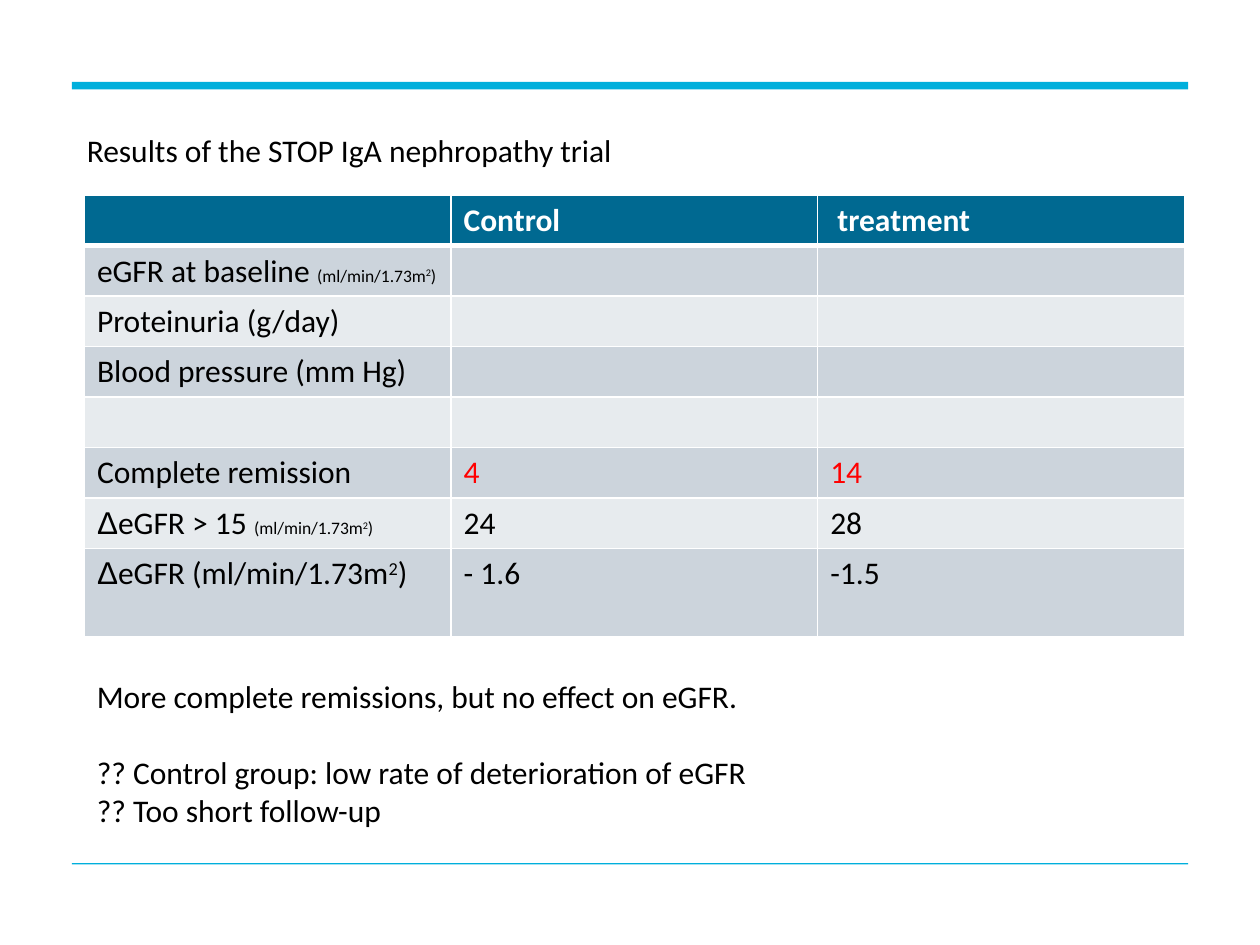
from pptx import Presentation
from pptx.dml.color import RGBColor
from pptx.enum.shapes import MSO_SHAPE as SHAPE
from pptx.oxml import parse_xml
from pptx.oxml.ns import nsdecls
from pptx.util import Inches, Pt

UNIT = [("(ml/min/1.73m", {"size": 10}), ("2", {"size": 10, "sup": True}),
        (")", {"size": 10})]
DELTA = ("Δ", {"font": "Arial"})
RED = {"color": "FF0000"}

ROWS = [
    ["", "Control", " treatment"],
    [["eGFR at baseline ", *UNIT], "", ""],
    ["Proteinuria (g/day)", "", ""],
    ["Blood pressure (mm Hg)", "", ""],
    ["", "", ""],
    ["Complete remission", [("4", RED)], [("14", RED)]],
    [[DELTA, "eGFR > 15 ", *UNIT], "24", "28"],
    [[DELTA, "eGFR (ml/min/1.73m", ("2", {"sup": True}), ")"], "- 1.6", "-1.5"],
]


def rgb(value):
    return RGBColor.from_string(value)


class TrialSlide:
    font, size, ink = "Calibri", 18, "000000"
    accent, header = "00AFDC", "006991"
    bands = ("CCD4DC", "E7EBEE")

    def __init__(self, prs):
        self.s = prs.slides.add_slide(prs.slide_layouts[6])

    def add_runs(self, p, runs, color=None, bold=False):
        """Fill a paragraph from a string or a list of strings and (text, style) pairs."""
        for item in [runs] if isinstance(runs, str) else runs:
            text, style = (item, {}) if isinstance(item, str) else item
            r = p.add_run()
            r.text = text
            r.font.name = style.get("font", self.font)
            r.font.size = Pt(style.get("size", self.size))
            r.font.bold = bold
            r.font.color.rgb = rgb(style.get("color", color or self.ink))
            if style.get("sup"):
                r._r.get_or_add_rPr().set("baseline", "30000")

    def rule(self, top, height):
        bar = self.s.shapes.add_shape(SHAPE.RECTANGLE, Inches(0.57), Inches(top),
                                      Inches(8.86), Inches(height))
        bar.shadow.inherit = False
        bar.fill.solid()
        bar.fill.fore_color.rgb = rgb(self.accent)
        bar.line.fill.background()

    def text(self, left, top, width, height, lines):
        """Add a text box; each line is (text, space before in points)."""
        box = self.s.shapes.add_textbox(Inches(left), Inches(top),
                                        Inches(width), Inches(height))
        tf = box.text_frame
        tf.word_wrap = True
        for i, (line, gap) in enumerate(lines):
            p = tf.add_paragraph() if i else tf.paragraphs[0]
            p.space_before = Pt(gap)
            self.add_runs(p, line)

    def border(self, cell, side, points):
        cell._tc.get_or_add_tcPr().append(parse_xml(
            f'<a:{side} {nsdecls("a")} w="{Pt(points)}"><a:solidFill>'
            f'<a:srgbClr val="FFFFFF"/></a:solidFill></a:{side}>'))

    def table(self, left, top, col_width, heights, rows):
        n_cols = len(rows[0])
        table = self.s.shapes.add_table(
            len(rows), n_cols, Inches(left), Inches(top),
            Inches(col_width * n_cols), Inches(sum(heights))).table
        for col in table.columns:
            col.width = Inches(col_width)
        for i, (row, height) in enumerate(zip(rows, heights)):
            table.rows[i].height = Inches(height)
            for j, content in enumerate(row):
                cell = table.cell(i, j)
                for side in ("lnL", "lnR", "lnT", "lnB"):
                    thick = (i, side) in ((0, "lnB"), (1, "lnT"))
                    self.border(cell, side, 3 if thick else 1)
                cell.fill.solid()
                cell.fill.fore_color.rgb = rgb(self.bands[(i - 1) % 2] if i else self.header)
                if content:
                    self.add_runs(cell.text_frame.paragraphs[0], content,
                                  None if i else "FFFFFF", bold=i == 0)


def main():
    prs = Presentation()
    prs.slide_width, prs.slide_height = Inches(10), Inches(7.5)
    slide = TrialSlide(prs)
    slide.rule(0.65, 0.06)
    slide.rule(6.85, 0.01)
    slide.text(0.59, 0.99, 8.82, 0.41, [("Results of the STOP IgA nephropathy trial", 0)])
    slide.table(0.67, 1.55, 2.91, [0.4] * 7 + [0.7], ROWS)
    slide.text(0.67, 5.32, 8.66, 1.31, [
        ("More complete remissions, but no effect on eGFR.", 0),
        ("?? Control group: low rate of deterioration of eGFR", 22),
        ("?? Too short follow-up", 0),
    ])
    prs.save("out.pptx")


if __name__ == "__main__":
    main()
